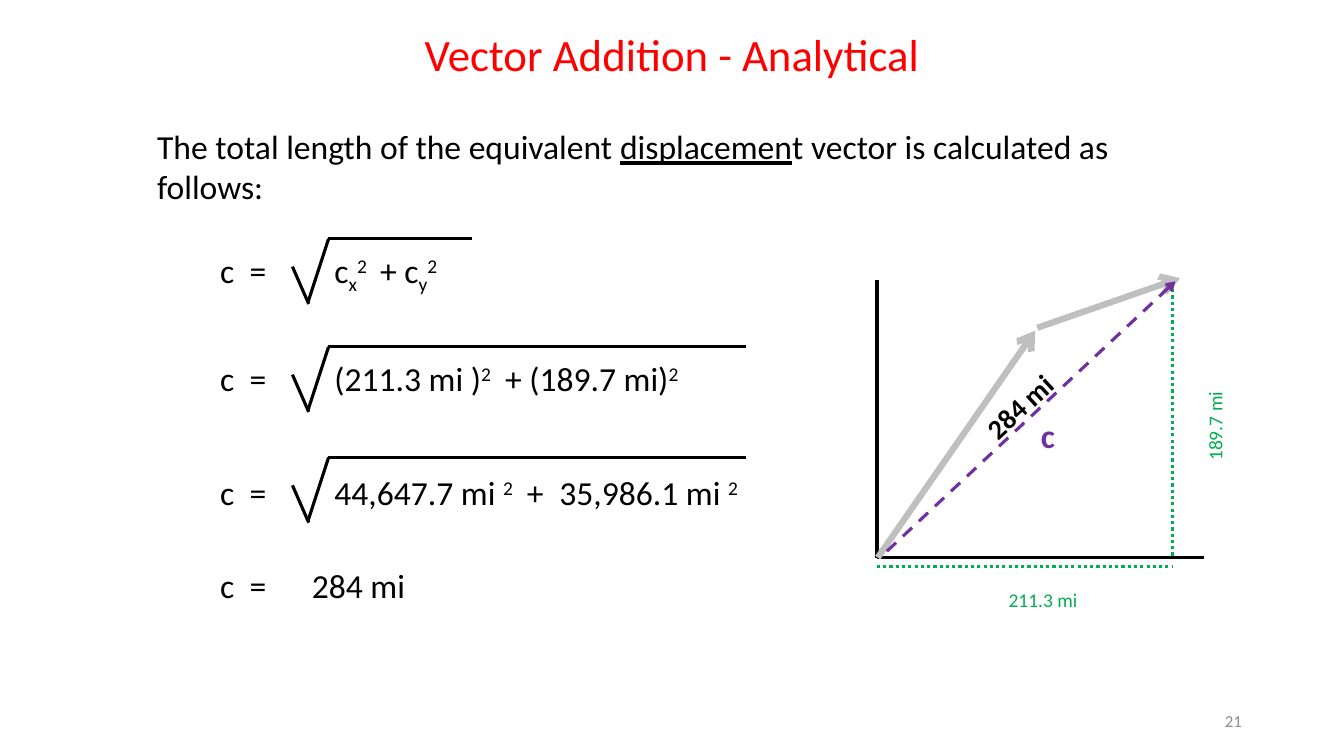
from dataclasses import dataclass

from lxml import etree
from pptx import Presentation
from pptx import util as u
from pptx.dml import color
from pptx.enum import dml, shapes, text
from pptx.oxml import ns

BLACK, RED, GREEN = "000000", "FF0000", "00B050"
PURPLE, SILVER, GREY = "7030A0", "BFBFBF", "8C8C8C"
SUBSCRIPT, SUPERSCRIPT = -25, 30


@dataclass
class Run:
    text: str
    baseline: int = 0
    underline: bool = False


@dataclass
class Label:
    """A text box; lengths in cm, tab stops measured from the text edge."""
    runs: list[Run]
    left: float
    top: float
    width: float
    height: float
    size: int = 24
    colour: str = BLACK
    bold: bool = False
    align: text.PP_ALIGN = text.PP_ALIGN.LEFT
    anchor: text.MSO_ANCHOR = text.MSO_ANCHOR.TOP
    auto_size: text.MSO_AUTO_SIZE = text.MSO_AUTO_SIZE.SHAPE_TO_FIT_TEXT
    margin_left: float = 0.25
    rotation: float = 0
    tabs: tuple[float, ...] = ()


@dataclass
class Stroke:
    """A straight line; lengths in cm."""
    start: tuple[float, float]
    end: tuple[float, float]
    colour: str = BLACK
    weight: float = 2.25
    dash: dml.MSO_LINE | None = None
    arrow: bool = False


@dataclass
class Equation:
    runs: list[Run]
    top: float
    width: float
    tabs: tuple[float, ...]
    bar_top: float | None = None
    bar_end: float = 18.8


def rgb(value: str) -> color.RGBColor:
    return color.RGBColor.from_string(value)


def draw_label(target, label: Label) -> None:
    shape = target.add_textbox(*(u.Cm(v) for v in (label.left, label.top, label.width, label.height)))
    shape.rotation = label.rotation
    frame_format = {
        "word_wrap": True,
        "auto_size": label.auto_size,
        "vertical_anchor": label.anchor,
        "margin_left": u.Cm(label.margin_left),
    }
    for name, value in frame_format.items():
        setattr(shape.text_frame, name, value)
    paragraph = shape.text_frame.paragraphs[0]
    paragraph.alignment = label.align
    if label.tabs:
        tab_list = etree.SubElement(paragraph._p.get_or_add_pPr(), ns.qn("a:tabLst"))
        for stop in label.tabs:
            etree.SubElement(tab_list, ns.qn("a:tab"), pos=str(int(u.Cm(stop))), algn="l")
    for part in label.runs:
        run = paragraph.add_run()
        run.text = part.text
        font_format = {
            "name": "Calibri",
            "size": u.Pt(label.size),
            "bold": label.bold,
            "underline": part.underline,
        }
        for name, value in font_format.items():
            setattr(run.font, name, value)
        run.font.color.rgb = rgb(label.colour)
        if part.baseline:
            run._r.get_or_add_rPr().set("baseline", str(part.baseline * 1000))


def draw_stroke(target, stroke: Stroke) -> None:
    connector = target.add_connector(
        shapes.MSO_CONNECTOR.STRAIGHT, *(u.Cm(v) for v in stroke.start + stroke.end))
    connector.line.color.rgb = rgb(stroke.colour)
    connector.line.width = u.Pt(stroke.weight)
    if stroke.dash is not None:
        connector.line.dash_style = stroke.dash
    if stroke.arrow:
        etree.SubElement(connector.line._get_or_add_ln(), ns.qn("a:tailEnd"), type="arrow")
    etree.SubElement(connector._element.spPr, ns.qn("a:effectLst"))


def draw_radical(slide, top: float, bar_end: float) -> None:
    group = slide.shapes.add_group_shape()
    for stroke in (
        Stroke((8.26, top), (bar_end, top)),
        Stroke((7.37, top + 0.7), (7.78, top + 1.64)),
        Stroke((7.76, top + 1.6), (8.28, top)),
    ):
        draw_stroke(group.shapes, stroke)


def draw_equation(slide, equation: Equation) -> None:
    draw_label(slide.shapes, Label(
        [Run("c\t=\t"), *equation.runs], 4.72, equation.top, equation.width, 1.27,
        margin_left=0.83, tabs=(0.74, *equation.tabs)))
    if equation.bar_top is not None:
        draw_radical(slide, equation.bar_top, equation.bar_end)


SQUARED = Run("2", SUPERSCRIPT)

TEXTS = [
    Label([Run("Vector Addition - Analytical")], 9.47, 0.56, 14.94, 1.62,
          size=32, colour=RED, align=text.PP_ALIGN.CENTER),
    Label([Run("The total length of the equivalent "), Run("displacemen", underline=True),
           Run("t vector is calculated as follows:")], 3.71, 3.05, 25.7, 2.31),
    Label([Run("284 mi")], 24.31, 9.32, 3.56, 1.12, size=20, bold=True, rotation=317.1),
    Label([Run("21")], 23.93, 17.65, 7.62, 1.02, size=12, colour=GREY,
          align=text.PP_ALIGN.RIGHT, anchor=text.MSO_ANCHOR.MIDDLE,
          auto_size=text.MSO_AUTO_SIZE.NONE),
]

EQUATIONS = [
    Equation([Run("c"), Run("x", SUBSCRIPT), SQUARED, Run("\t+ c"), Run("y", SUBSCRIPT), SQUARED],
             6.17, 7.75, (2.88, 4.03), 6.02, 11.89),
    Equation([Run("(211.3 mi )"), SQUARED, Run("\t+ (189.7 mi)"), SQUARED],
             8.89, 13.51, (2.88, 7.18), 8.74),
    Equation([Run("44,647.7 mi "), SQUARED, Run("\t+\t35,986.1 mi "), SQUARED],
             11.76, 15.01, (2.88, 7.73, 8.55), 11.53),
    Equation([Run("284 mi")], 14.1, 14.35, (2.31,)),
]

DIAGRAM_STROKES = [
    # Axes
    Stroke((22.1, 7.06), (22.1, 14.05)),
    Stroke((30.33, 14.05), (22.1, 14.05)),
    # Two vectors with their components and resultant
    Stroke((22.12, 14.05), (26.09, 8.33), SILVER, 4.5, arrow=True),
    Stroke((22.1, 14.27), (29.54, 14.27), GREEN, dash=dml.MSO_LINE.ROUND_DOT),
    Stroke((29.54, 14.0), (29.54, 7.21), GREEN, dash=dml.MSO_LINE.ROUND_DOT),
    Stroke((26.14, 8.26), (29.74, 7.01), SILVER, 4.5, arrow=True),
    Stroke((22.35, 13.89), (29.62, 7.09), PURPLE, dash=dml.MSO_LINE.DASH, arrow=True),
]

DIAGRAM_LABELS = [
    Label([Run("c")], 25.98, 10.34, 1.35, 1.27, colour=PURPLE, bold=True),
    Label([Run("211.3 mi", SUBSCRIPT)], 25.17, 14.12, 2.82, 0.94, colour=GREEN),
    Label([Run("189.7 mi", SUBSCRIPT)], 28.68, 9.98, 2.82, 0.94, colour=GREEN, rotation=270),
]


def main() -> None:
    presentation = Presentation()
    presentation.slide_width, presentation.slide_height = u.Cm(33.87), u.Cm(19.05)
    slide = presentation.slides.add_slide(presentation.slide_layouts[6])

    # Title, introduction, resultant length and slide number
    for label in TEXTS:
        draw_label(slide.shapes, label)

    # Worked equations
    for equation in EQUATIONS:
        draw_equation(slide, equation)

    # Vector diagram
    diagram = slide.shapes.add_group_shape()
    for stroke in DIAGRAM_STROKES:
        draw_stroke(diagram.shapes, stroke)
    for label in DIAGRAM_LABELS:
        draw_label(diagram.shapes, label)

    presentation.save("out.pptx")


if __name__ == "__main__":
    main()
